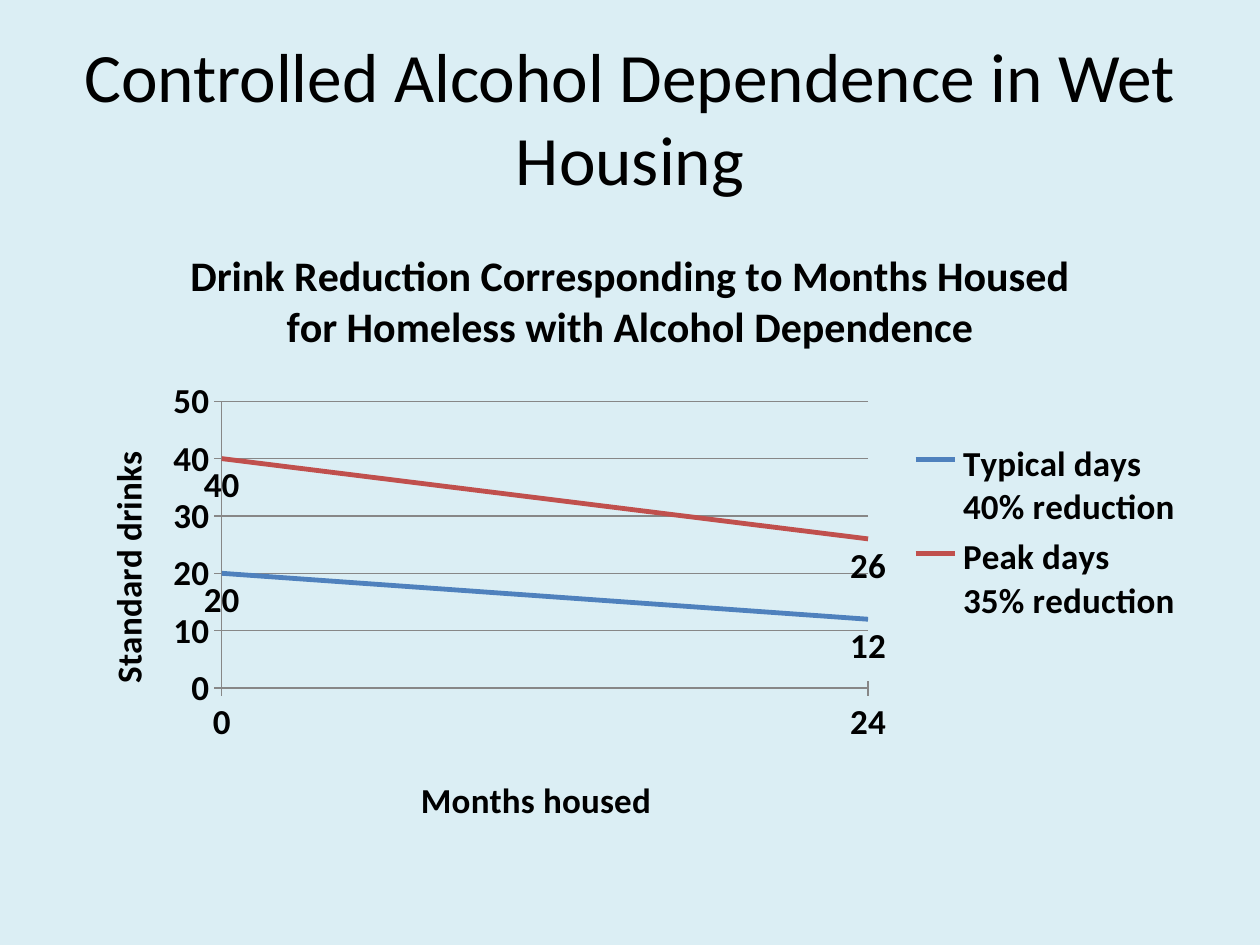
import dataclasses
import lxml.etree
import pptx
import pptx.chart.data
import pptx.dml.color
import pptx.enum.chart
import pptx.enum.text
import pptx.oxml
import pptx.oxml.ns
import pptx.util

Inches = pptx.util.Inches
Pt = pptx.util.Pt
tag = pptx.oxml.ns.qn


def shade(code):
    return pptx.dml.color.RGBColor.from_string(code)


@dataclasses.dataclass(frozen=True)
class Theme:
    font: str = "Calibri"
    back: str = "DBEEF4"
    ink: str = "000000"
    grid: str = "878787"
    lines: tuple = ("4F81BD", "C0504D")
    head: float = 39.6
    title: float = 24
    label: float = 20
    thin: float = 0.75
    thick: float = 2.75


class Deck:
    def __init__(self, theme):
        self.theme = theme
        self.show = pptx.Presentation()
        self.show.slide_width, self.show.slide_height = Inches(10), Inches(7.5)
        self.slide = self.show.slides.add_slide(self.show.slide_layouts[6])
        fill = self.slide.background.fill
        fill.solid()
        fill.fore_color.rgb = shade(theme.back)

    def style(self, font, size, bold=False):
        font.name = self.theme.font
        font.size = Pt(size)
        font.bold = bold
        font.color.rgb = shade(self.theme.ink)

    def stroke(self, line, color, width):
        line.color.rgb = shade(color)
        line.width = Pt(width)

    def heading(self, text, *box):
        frame = self.slide.shapes.add_textbox(*map(Inches, box)).text_frame
        frame.word_wrap = True
        frame.vertical_anchor = pptx.enum.text.MSO_ANCHOR.MIDDLE
        frame.text = text
        for para in frame.paragraphs:
            para.alignment = pptx.enum.text.PP_ALIGN.CENTER
            for run in para.runs:
                self.style(run.font, self.theme.head)

    def caption(self, owner, text, size):
        owner.has_title = True
        title = getattr(owner, "chart_title", None) or owner.axis_title
        title.text_frame.text = text
        for run in title.text_frame.paragraphs[0].runs:
            self.style(run.font, size, True)
        return title

    def place(self, node, **spots):
        for old in node.findall(tag("c:layout")):
            node.remove(old)
        layout = lxml.etree.Element(tag("c:layout"))
        manual = lxml.etree.SubElement(layout, tag("c:manualLayout"))
        if "w" in spots:
            lxml.etree.SubElement(manual, tag("c:layoutTarget")).set("val", "inner")
        for side in ("x", "y"):
            lxml.etree.SubElement(manual, tag(f"c:{side}Mode")).set("val", "edge")
        for side, part in spots.items():
            lxml.etree.SubElement(manual, tag(f"c:{side}")).set("val", str(part))
        text = node.find(tag("c:tx"))
        node.insert(0 if text is None else 1, layout)

    def axis(self, axis, text, x, y):
        title = self.caption(axis, text, self.theme.label)
        self.place(title._element, x=x, y=y)
        axis.major_tick_mark = pptx.enum.chart.XL_TICK_MARK.CROSS
        self.style(axis.tick_labels.font, self.theme.label, True)
        self.stroke(axis.format.line, self.theme.grid, self.theme.thin)

    def chart(self, title, months, drinks, *box):
        data = pptx.chart.data.CategoryChartData()
        data.categories = months
        for name, counts in drinks.items():
            data.add_series(name, counts)
        kind = pptx.enum.chart.XL_CHART_TYPE.LINE
        chart = self.slide.shapes.add_chart(kind, *map(Inches, box), data).chart
        self.style(chart.font, self.theme.label, True)
        self.caption(chart, title, self.theme.title)
        chart.chart_title.include_in_layout = False
        chart.has_legend = True
        chart.legend.position = pptx.enum.chart.XL_LEGEND_POSITION.RIGHT
        chart.legend.include_in_layout = False
        self.style(chart.legend.font, self.theme.label, True)

        self.axis(chart.category_axis, "Months housed", 0.31, 0.88)
        self.axis(chart.value_axis, "Standard drinks", 0.03, 0.36)
        scale = chart.value_axis
        scale.minimum_scale, scale.maximum_scale, scale.major_unit = 0, 50, 10
        scale.has_major_gridlines = True
        self.stroke(scale.major_gridlines.format.line, self.theme.grid, self.theme.thin)
        between = lxml.etree.Element(tag("c:crossBetween"), val="midCat")
        scale._element.find(tag("c:majorUnit")).addprevious(between)

        plot = chart.plots[0]
        plot.vary_by_categories = False
        for line, color in zip(plot.series, self.theme.lines):
            line.smooth = False
            line.marker.style = pptx.enum.chart.XL_MARKER_STYLE.NONE
            self.stroke(line.format.line, color, self.theme.thick)
            labels = line.data_labels
            labels.show_value = True
            labels.position = pptx.enum.chart.XL_LABEL_POSITION.BELOW
            self.style(labels.font, self.theme.label, True)
        area = chart._chartSpace.chart.plotArea
        self.place(area, x=0.14, y=0.29, w=0.57, h=0.46)


def main():
    deck = Deck(Theme())
    deck.heading("Controlled Alcohol Dependence in Wet Housing", 0.5, 0.3, 9, 1.25)
    deck.chart(
        "Drink Reduction Corresponding to Months Housed for Homeless with Alcohol Dependence",
        ["0", "24"],
        {
            "Typical days\n40% reduction": (20, 12),
            "Peak days\n35% reduction": (40, 26),
        },
        0.5, 1.75, 9, 4.95,
    )
    deck.show.save("out.pptx")


if __name__ == "__main__":
    main()
